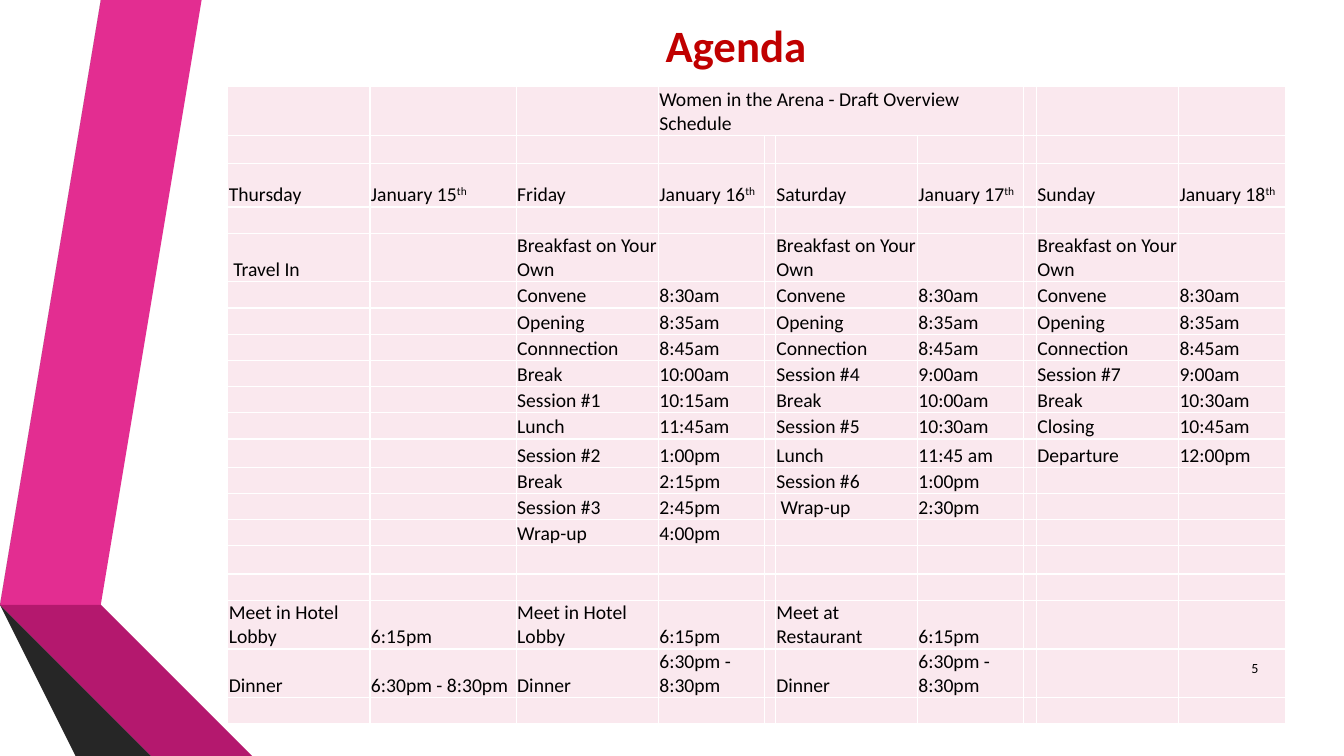
import pptx
import pptx.util
import pptx.dml.color
import pptx.enum.text
import pptx.oxml.ns
import lxml.etree

INK = {
    "pink": "E32D91", "plum": "B4186E", "wine": "781049",
    "gray": "595959", "dark": "404040", "coal": "262626",
    "red": "C00000", "rose": "FAE8EE", "white": "FFFFFF", "black": "000000",
}
FONT = "Calibri"
WIDE, HIGH = 13.33, 7.5

# Ribbon outlines in inches, from the slide's top left corner
BANDS = [
    ("pink", [(0.5, 5.78), (0.77, 5.83), (1.73, 0), (1.45, 0)]),
    ("gray", [(1.39, 0), (1.11, 0), (0.16, 5.73), (0.44, 5.77)]),
    ("coal", [(0.16, 5.73), (1.45, HIGH), (1.51, HIGH)]),
    ("wine", [(0.5, 5.79), (2.08, HIGH), (2.14, HIGH)]),
    ("plum", [(0.5, 5.79), (2.14, HIGH), (2.83, HIGH), (0.77, 5.83), (0.5, 5.78)]),
    ("dark", [(2.02, HIGH), (0.48, 5.83), (0.44, 5.77), (0.16, 5.73), (1.51, HIGH)]),
]

# Table grid: column widths, and row heights where they differ from the usual
COLS = [1.41, 1.45, 1.41, 1.05, 0.11, 1.41, 1.05, 0.13, 1.41, 1.06]
ROWS, USUAL = 20, 0.26
TALL = {0: 0.43, 1: 0.28, 2: 0.43, 4: 0.43, 11: 0.28, 15: 0.28, 17: 0.43, 18: 0.43}
HEAD, FIRST, NIGHT = 2, 4, 17

# Each day: first column, name, date, daytime items, evening items
DINNER = ("Dinner", "6:30pm - 8:30pm")
LOBBY = ("Meet in Hotel Lobby", "6:15pm")
START = [("Breakfast on Your Own", ""), ("Convene", "8:30am"), ("Opening", "8:35am")]
DAYS = [
    (0, "Thursday", "January 15", [(" Travel In", "")], [LOBBY, DINNER]),
    (2, "Friday", "January 16", START + [
        ("Connnection", "8:45am"), ("Break", "10:00am"), ("Session #1", "10:15am"),
        ("Lunch", "11:45am"), ("Session #2", "1:00pm"), ("Break", "2:15pm"),
        ("Session #3", "2:45pm"), ("Wrap-up", "4:00pm")], [LOBBY, DINNER]),
    (5, "Saturday", "January 17", START + [
        ("Connection", "8:45am"), ("Session #4", "9:00am"), ("Break", "10:00am"),
        ("Session #5", "10:30am"), ("Lunch", "11:45 am"), ("Session #6", "1:00pm"),
        (" Wrap-up", "2:30pm")], [("Meet at Restaurant", "6:15pm"), DINNER]),
    (8, "Sunday", "January 18", START + [
        ("Connection", "8:45am"), ("Session #7", "9:00am"), ("Break", "10:30am"),
        ("Closing", "10:45am"), ("Departure", "12:00pm")], []),
]


def inch(num):
    return pptx.util.Inches(num)


def color(name):
    return pptx.dml.color.RGBColor.from_string(INK[name])


def style(para, size, name="black", bold=False):
    for run in para.runs:
        run.font.name = FONT
        run.font.size = pptx.util.Pt(size)
        run.font.bold = bold
        run.font.color.rgb = color(name)


def add_tag(root, tag, **attrs):
    return lxml.etree.SubElement(root, pptx.oxml.ns.qn(tag), **attrs)


def place(shape, box):
    shape.left, shape.top, shape.width, shape.height = map(inch, box)


def draw_bands(slide, box):
    left, top = box[:2]
    for name, dots in BANDS:
        path = [(left + x, top + y) for x, y in dots]
        pen = slide.shapes.build_freeform(*path[0], scale=inch(1))
        pen.add_line_segments(path[1:], close=True)
        band = pen.convert_to_shape()
        band.shadow.inherit = False
        band.fill.solid()
        band.fill.fore_color.rgb = color(name)
        band.line.fill.background()


def draw_title(slide, box):
    title = slide.shapes.title
    place(title, box)
    frame = title.text_frame
    frame.text = "Agenda"
    frame.auto_size = pptx.enum.text.MSO_AUTO_SIZE.NONE
    frame.vertical_anchor = pptx.enum.text.MSO_ANCHOR.MIDDLE
    frame.margin_left = inch(0.33)
    para = frame.paragraphs[0]
    para.alignment = pptx.enum.text.PP_ALIGN.CENTER
    style(para, 32, "red", True)


def dress(cell):
    """Margins, white borders, rose fill and text size of one cell."""
    cell.margin_left = cell.margin_right = cell.margin_top = inch(0.01)
    cell.margin_bottom = 0
    cell.vertical_anchor = pptx.enum.text.MSO_ANCHOR.BOTTOM
    for side in ("a:lnL", "a:lnR", "a:lnT", "a:lnB"):
        line = add_tag(cell._tc.get_or_add_tcPr(), side, w="12700")
        add_tag(add_tag(line, "a:solidFill"), "a:srgbClr", val=INK["white"])
    cell.fill.solid()
    cell.fill.fore_color.rgb = color("rose")
    para = cell.text_frame.paragraphs[0]
    style(para, 14)
    if not para.runs:
        add_tag(para._p, "a:endParaRPr", sz="1400")


def draw_table(slide, box):
    frame = slide.shapes.add_table(ROWS, len(COLS), *map(inch, box))
    grid = frame.table
    grid.first_row = grid.horz_banding = False
    for col, width in zip(grid.columns, COLS):
        col.width = inch(width)
    for num, row in enumerate(grid.rows):
        row.height = inch(TALL.get(num, USUAL))

    # Heading across the middle columns
    grid.cell(0, 3).merge(grid.cell(0, 6))
    grid.cell(0, 3).text = "Women in the Arena - Draft Overview Schedule"

    # Days and their items
    for col, day, date, items, night in DAYS:
        grid.cell(HEAD, col).text = day
        para = grid.cell(HEAD, col + 1).text_frame.paragraphs[0]
        para.text = date
        tail = para.add_run()
        tail.text = "th"
        tail._r.get_or_add_rPr().set("baseline", "30000")
        for first, part in ((FIRST, items), (NIGHT, night)):
            for row, (what, when) in enumerate(part, first):
                grid.cell(row, col).text = what
                grid.cell(row, col + 1).text = when

    for cell in grid.iter_cells():
        dress(cell)


def draw_page(slide, box):
    frame = slide.shapes.add_textbox(*map(inch, box)).text_frame
    frame.word_wrap = True
    frame.vertical_anchor = pptx.enum.text.MSO_ANCHOR.MIDDLE
    frame.text = "5"
    para = frame.paragraphs[0]
    para.alignment = pptx.enum.text.PP_ALIGN.RIGHT
    style(para, 10)


def main():
    deck = pptx.Presentation()
    deck.slide_width, deck.slide_height = inch(WIDE), inch(HIGH)
    slide = deck.slides.add_slide(deck.slide_layouts[5])
    draw_bands(slide, (0, 0, WIDE, HIGH))
    draw_title(slide, (2.5, 0.12, 9.37, 0.64))
    draw_table(slide, (2.26, 0.86, 10.49, 6.31))
    draw_page(slide, (11.98, 6.43, 0.6, 0.4))
    deck.save("out.pptx")


if __name__ == "__main__":
    main()
